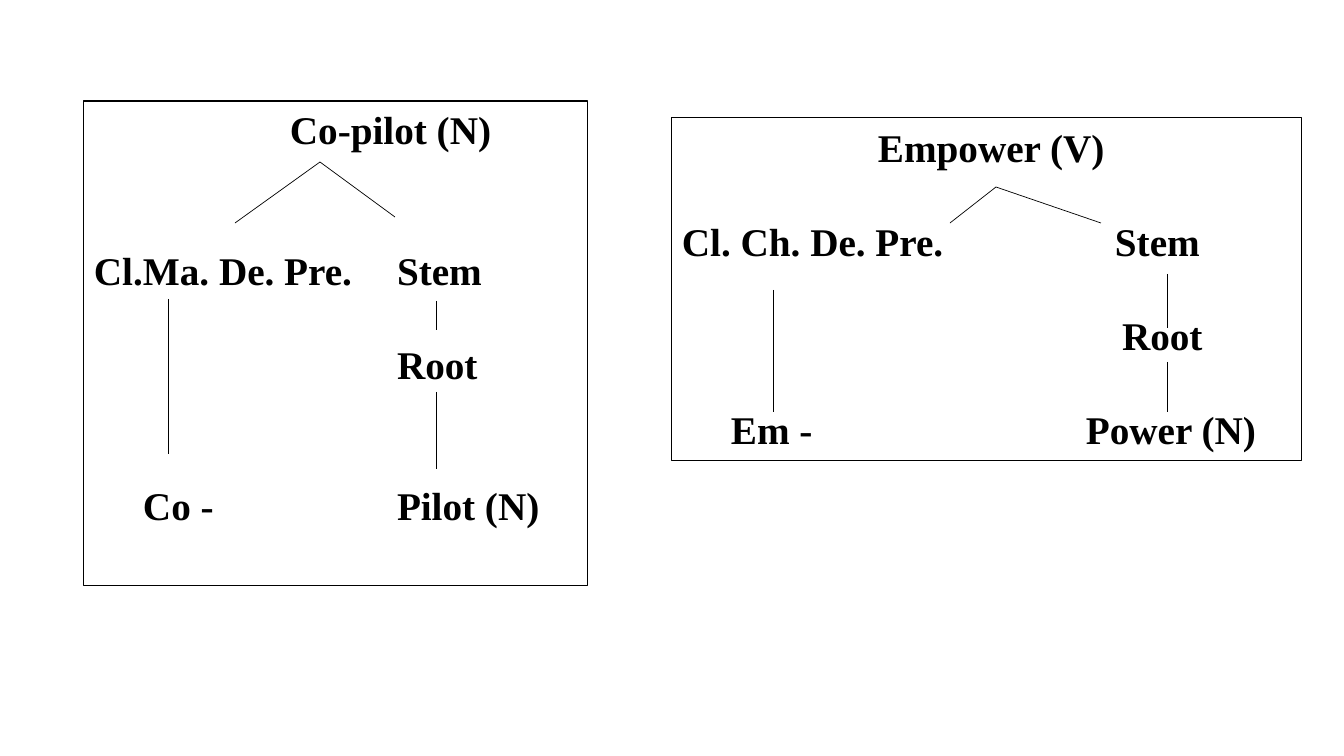
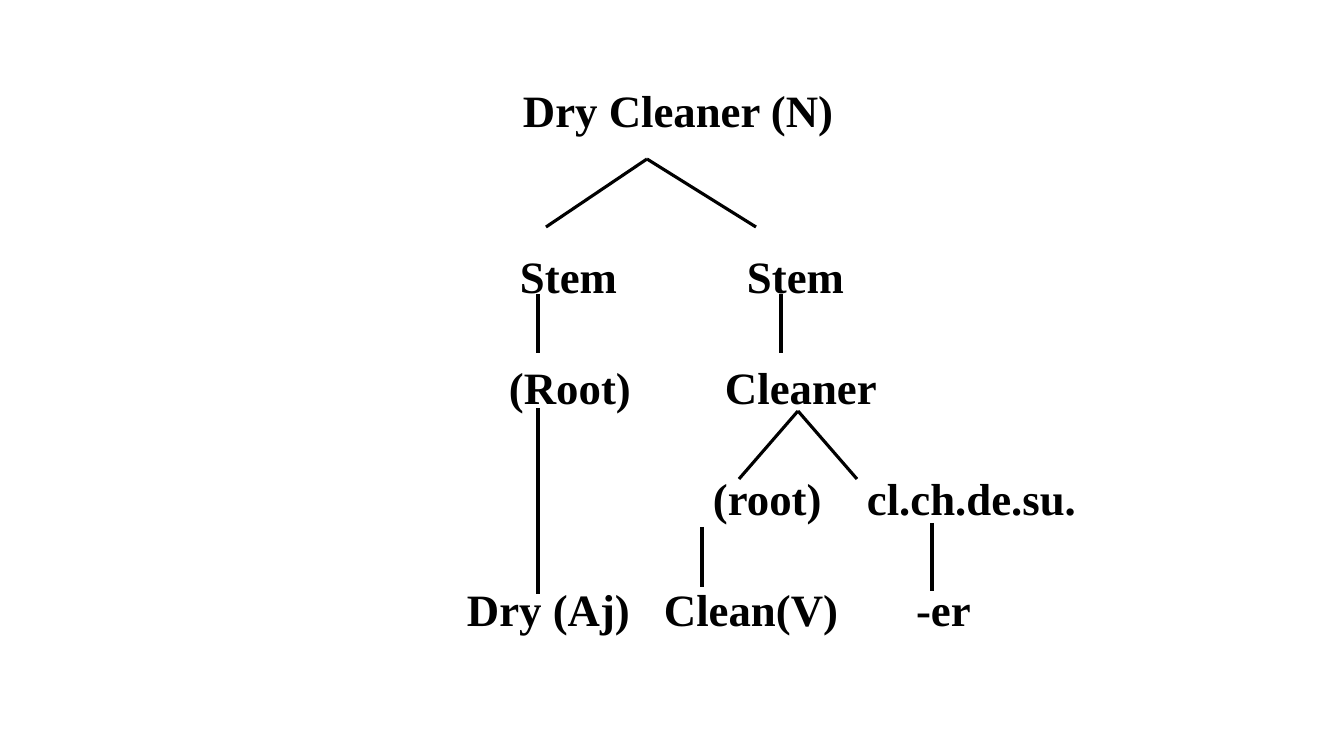
"""Build two slides of word-structure trees."""
from lxml.etree import SubElement
from pptx import Presentation
from pptx.dml.color import RGBColor
from pptx.enum.shapes import MSO_CONNECTOR as Connector, MSO_SHAPE as Shape
from pptx.enum.text import MSO_ANCHOR as Anchor, PP_ALIGN as Align
from pptx.oxml.ns import qn
from pptx.util import Emu, Pt

PX = 9071.43
SLACK = 14
COLORS = {"ink": "000000", "paper": "FFFFFF"}
FONT = "Times New Roman"


def px(length):
    """Turn px into EMU."""
    return Emu(round(length * PX))


def color(name):
    """Look up a palette colour."""
    return RGBColor.from_string(COLORS[name])


def add_page(deck):
    """Add a blank slide with the shared background."""
    page = deck.slides.add_slide(deck.slide_layouts[6])
    page.background.fill.solid()
    page.background.fill.fore_color.rgb = color("paper")
    return page


def add_frame(page, left, top, width, height):
    """Draw the thin outline around a tree."""
    frame = page.shapes.add_shape(Shape.RECTANGLE, *map(px, (left, top, width, height)))
    frame.shadow.inherit = False
    frame.fill.background()
    frame.line.color.rgb = color("ink")
    frame.line.width = Pt(0.75)


def add_label(page, text, left, top, width, size=28, bold=True, ink="ink"):
    """Write one node of a tree on a single line."""
    box = page.shapes.add_textbox(px(left), px(top), px(width + SLACK), Pt(size * 1.2))
    frame = box.text_frame
    frame.word_wrap = True
    frame.vertical_anchor = Anchor.TOP
    frame.margin_left = frame.margin_right = frame.margin_top = frame.margin_bottom = 0
    para = frame.paragraphs[0]
    para.alignment = Align.LEFT
    span = para.add_run()
    span.text = text
    span.font.name = FONT
    span.font.size = Pt(size)
    span.font.bold = bold
    span.font.color.rgb = color(ink)


def add_line(page, start, end, weight):
    """Draw a plain line between two points."""
    line = page.shapes.add_connector(Connector.STRAIGHT, *map(px, (*start, *end)))
    line.line.color.rgb = color("ink")
    line.line.width = Pt(weight)
    SubElement(line._element.spPr, qn("a:effectLst"))


def add_tree(page, top, pitch, labels, forks, stalks, size, weight):
    """Place labels on evenly spaced rows and join them with lines."""
    for text, left, row, width in labels:
        add_label(page, text, left, top + int(row * pitch), width, size=size)
    for apex, *feet in forks:
        for foot in feet:
            add_line(page, apex, foot, weight)
    for x, upper, lower in stalks:
        add_line(page, (x, upper), (x, lower), weight)


def build_prefix_page(deck):
    """Show the two prefixed words side by side."""
    page = add_page(deck)
    style = {"pitch": 47, "size": 28, "weight": 0.5}
    add_frame(page, 84, 101, 504, 485)
    add_tree(
        page, top=105, **style,
        labels=[
            ("Co-pilot (N)", 290, 0, 201),
            ("Cl.Ma. De. Pre.", 94, 3, 258), ("Stem", 397, 3, 84),
            ("Root", 397, 5, 80),
            ("Co -", 143, 8, 70), ("Pilot (N)", 397, 8, 142),
        ],
        forks=[((320, 162), (235, 223), (395, 217))],
        stalks=[(168, 299, 454), (436, 301, 330), (436, 392, 469)],
    )
    add_frame(page, 672, 118, 630, 343)
    add_tree(
        page, top=123, **style,
        labels=[
            ("Empower (V)", 878, 0, 226),
            ("Cl. Ch. De. Pre.", 682, 2, 261), ("Stem", 1115, 2, 84),
            ("Root", 1122, 4, 80),
            ("Em -", 731, 6, 81), ("Power (N)", 1086, 6, 169),
        ],
        forks=[((996, 187), (950, 223), (1101, 223))],
        stalks=[(773, 290, 412), (1167, 274, 328), (1167, 362, 412)],
    )


def build_compound_page(deck):
    """Show the compound word as one large tree."""
    page = add_page(deck)
    add_tree(
        page, top=83, pitch=55.5, size=32, weight=2.25,
        labels=[
            ("Dry Cleaner (N)", 523, 0, 310),
            ("Stem", 520, 3, 96), ("Stem", 747, 3, 96),
            ("(Root)", 509, 5, 121), ("Cleaner", 725, 5, 150),
            ("(root)", 713, 7, 108), ("cl.ch.de.su.", 867, 7, 208),
            ("Dry (Aj)", 467, 9, 163), ("Clean(V)", 664, 9, 173), ("-er", 916, 9, 54),
        ],
        forks=[
            ((647, 159), (546, 227), (756, 227)),
            ((798, 411), (739, 479), (857, 479)),
        ],
        stalks=[
            (538, 294, 353), (781, 294, 353), (538, 408, 594),
            (702, 527, 587), (932, 523, 591),
        ],
    )


def main():
    """Build and save the deck."""
    deck = Presentation()
    deck.slide_width, deck.slide_height = px(1344), px(756)
    build_prefix_page(deck)
    build_compound_page(deck)
    deck.save("out.pptx")


if __name__ == "__main__":
    main()
